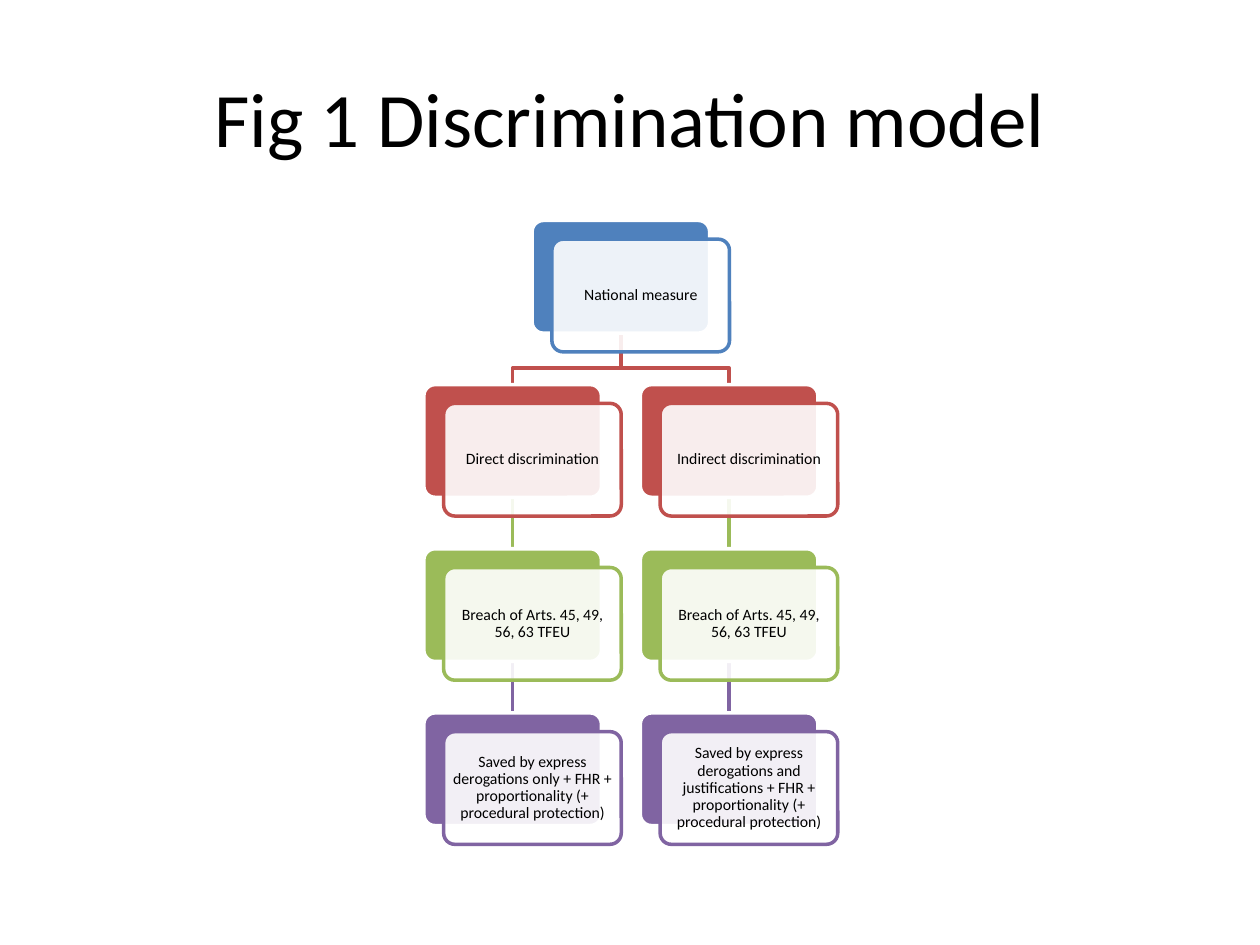
from dataclasses import dataclass
from lxml.etree import SubElement
from pptx import Presentation
from pptx.dml.color import RGBColor
from pptx.enum.shapes import MSO_CONNECTOR, MSO_SHAPE
from pptx.enum.text import MSO_ANCHOR, PP_ALIGN
from pptx.oxml.ns import qn
from pptx.shapes.autoshape import Shape
from pptx.shapes.base import BaseShape
from pptx.shapes.shapetree import SlideShapes
from pptx.text.text import TextFrame
from pptx.util import Pt


@dataclass(frozen=True)
class Theme:
    font: str = "Calibri"
    ink: str = "000000"
    paper: str = "FFFFFF"
    tiers: tuple[str, ...] = ("4F81BD", "C0504D", "9BBB59", "8064A2")
    title: float = 44
    body: float = 9
    stroke: float = 2
    alpha: int = 90000


@dataclass(frozen=True)
class Node:
    text: str
    col: float
    row: int

    @property
    def left(self) -> float:
        return LEFT + self.col * STEP_X

    @property
    def top(self) -> float:
        return TOP + self.row * STEP_Y

    @property
    def mid(self) -> float:
        return self.left + WIDTH / 2


THEME = Theme()
LEFT, TOP = 242.2, 126
STEP_X, STEP_Y = 123.7, 93.8
WIDTH, HEIGHT = 101.5, 64.4
SHIFT_X, SHIFT_Y = 11.3, 10.7
BEND = 20

ROOT = Node("National measure", 0.5, 0)
CHAINS = (
    ("Direct discrimination", "Breach of Arts. 45, 49, 56, 63 TFEU",
     "Saved by express derogations only + FHR + proportionality (+ procedural protection)"),
    ("Indirect discrimination", "Breach of Arts. 45, 49, 56, 63 TFEU",
     "Saved by express derogations and justifications + FHR + proportionality (+ procedural protection)"),
)


def write(frame: TextFrame, text: str, *, size: float, pad: float, space: float = 1.0) -> None:
    frame.word_wrap = True
    frame.vertical_anchor = MSO_ANCHOR.MIDDLE
    frame.margin_left = frame.margin_right = Pt(pad)
    frame.margin_top = frame.margin_bottom = Pt(pad)
    para = frame.paragraphs[0]
    para.alignment = PP_ALIGN.CENTER
    para.line_spacing = space
    run = para.add_run()
    run.text = text
    run.font.name = THEME.font
    run.font.size = Pt(size)
    run.font.color.rgb = RGBColor.from_string(THEME.ink)


def stroke(item: BaseShape, color: str) -> None:
    item.line.color.rgb = RGBColor.from_string(color)
    item.line.width = Pt(THEME.stroke)


def panel(shapes: SlideShapes, left: float, top: float, fill: str, line: str) -> Shape:
    box = shapes.add_shape(MSO_SHAPE.ROUNDED_RECTANGLE, Pt(left), Pt(top), Pt(WIDTH), Pt(HEIGHT))
    box.adjustments[0] = 0.1
    box.shadow.inherit = False
    box.fill.solid()
    box.fill.fore_color.rgb = RGBColor.from_string(fill)
    stroke(box, line)
    return box


def card(shapes: SlideShapes, node: Node) -> Shape:
    color = THEME.tiers[node.row]
    back = panel(shapes, node.left, node.top, color, THEME.paper)
    front = panel(shapes, node.left + SHIFT_X, node.top + SHIFT_Y, THEME.paper, color)
    tint = front.element.spPr.find(qn("a:solidFill")).find(qn("a:srgbClr"))
    SubElement(tint, qn("a:alpha"), val=str(THEME.alpha))
    write(front.text_frame, node.text, size=THEME.body, pad=2.9, space=0.9)
    return back


def branch(shapes: SlideShapes, child: Node) -> None:
    start, end = ROOT.top + HEIGHT, child.top
    pen = shapes.build_freeform(Pt(ROOT.mid), Pt(start))
    turn = end - 29.5 + BEND
    pen.add_line_segments(
        [(Pt(ROOT.mid), Pt(turn)), (Pt(child.mid), Pt(turn)), (Pt(child.mid), Pt(end))],
        close=False,
    )
    path = pen.convert_to_shape()
    path.shadow.inherit = False
    path.fill.background()
    stroke(path, THEME.tiers[child.row])


def link(shapes: SlideShapes, upper: Shape, lower: Shape, color: str, floor: BaseShape) -> None:
    line = shapes.add_connector(MSO_CONNECTOR.STRAIGHT, 0, 0, 0, 0)
    line.begin_connect(upper, 2)
    line.end_connect(lower, 0)
    stroke(line, color)
    SubElement(line.element.spPr, qn("a:effectLst"))
    floor.element.addnext(line.element)


def main() -> None:
    deck = Presentation()
    deck.slide_width, deck.slide_height = Pt(720), Pt(540)
    shapes = deck.slides.add_slide(deck.slide_layouts[6]).shapes
    title = shapes.add_textbox(Pt(36), Pt(21.6), Pt(648), Pt(90))
    write(title.text_frame, "Fig 1 Discrimination model", size=THEME.title, pad=3.6)

    chains = [
        [Node(text, col, row) for row, text in enumerate(texts, 1)]
        for col, texts in enumerate(CHAINS)
    ]
    for chain in chains:
        branch(shapes, chain[0])
    card(shapes, ROOT)
    for chain in chains:
        backs = [card(shapes, node) for node in chain]
        for node, upper, lower in zip(chain[1:], backs, backs[1:]):
            link(shapes, upper, lower, THEME.tiers[node.row], title)

    deck.save("out.pptx")


if __name__ == "__main__":
    main()
